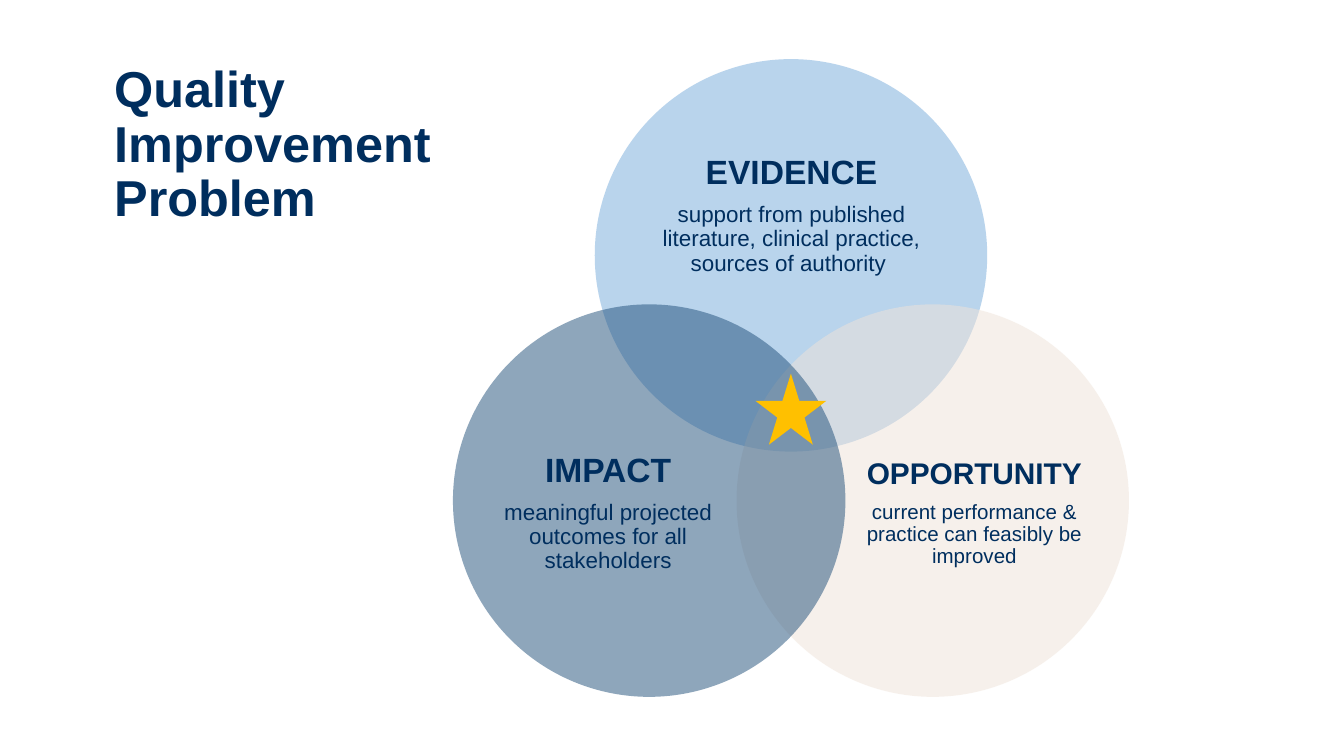
from dataclasses import dataclass

from lxml.etree import SubElement
from pptx import Presentation
from pptx.dml.color import RGBColor
from pptx.enum.shapes import MSO_SHAPE as Shape
from pptx.enum.text import MSO_ANCHOR as Anchor, MSO_AUTO_SIZE as Fit, PP_ALIGN as Align
from pptx.oxml.ns import qn
from pptx.util import Emu, Pt

SCALE = 4572  # EMU per px, 200 px to the inch


@dataclass(frozen=True)
class Theme:
    font: str = "Arial"
    ink: str = "002E5E"
    blue: str = "9CC2E5"
    sand: str = "EFE3D9"
    navy: str = "1E4E79"
    gold: str = "FFC000"
    title: int = 27
    large: tuple = (18, 12)
    small: tuple = (16, 11)
    lead: float = 0.9
    gap: float = 0.35  # space above a note, as a share of its head size


THEME = Theme()
SIZE = 584  # circle diameter

# head, note, (head size, note size), fill, opacity %, circle corner, text box
RINGS = [
    ("EVIDENCE", "support from published literature, clinical practice, sources of authority ",
     THEME.large, THEME.blue, 70, (885, 88), (964, 190, 428, 262)),
    ("OPPORTUNITY", "current performance & practice can feasibly be improved",
     THEME.small, THEME.sand, 50, (1096, 453), (1275, 603, 350, 322)),
    ("IMPACT", "meaningful projected outcomes for all stakeholders",
     THEME.large, THEME.navy, 50, (674, 453), (730, 603, 350, 322)),
]


def px(*nums):
    return [Emu(n * SCALE) for n in nums]


def write(para, text, *, size, bold=False, align=Align.LEFT, before=0):
    para.alignment = align
    para.line_spacing = THEME.lead
    para.space_before = Pt(before)
    run = para.add_run()
    run.text = text
    font = run.font
    font.name, font.size, font.bold = THEME.font, Pt(size), bold
    font.color.rgb = RGBColor.from_string(THEME.ink)


def frame(shape, *, side=0, top=0):
    """Set up a wrapped, vertically centred text frame."""
    body = shape.text_frame
    body.word_wrap, body.auto_size = True, Fit.NONE
    body.vertical_anchor = Anchor.MIDDLE
    body.margin_left, body.margin_right = px(side, side)
    body.margin_top, body.margin_bottom = px(top, top)
    return body


def add_title(slide, text, box):
    title = slide.shapes.title
    title.left, title.top, title.width, title.height = px(*box)
    write(frame(title, side=20, top=10).paragraphs[0], text, size=THEME.title, bold=True)


def add_form(slide, kind, box, fill, alpha=100):
    """Add a preset shape without outline; alpha is its opacity in percent."""
    form = slide.shapes.add_shape(kind, *px(*box))
    form.shadow.inherit = False
    form.line.fill.background()
    form.fill.solid()
    form.fill.fore_color.rgb = RGBColor.from_string(fill)
    if alpha < 100:
        tint = form.fill._xPr.find(".//" + qn("a:srgbClr"))
        SubElement(tint, qn("a:alpha"), val=str(alpha * 1000))


def add_label(slide, head, note, sizes, box):
    body = frame(slide.shapes.add_textbox(*px(*box)))
    big, small = sizes
    write(body.paragraphs[0], head, size=big, bold=True, align=Align.CENTER)
    write(body.add_paragraph(), note, size=small, align=Align.CENTER, before=big * THEME.gap)


def main():
    deck = Presentation()
    deck.slide_width, deck.slide_height = px(2000, 1125)
    slide = deck.slides.add_slide(deck.slide_layouts.get_by_name("Title Only"))
    add_title(slide, "Quality Improvement Problem", (150, 151, 676, 132))
    for head, note, sizes, fill, alpha, spot, box in RINGS:
        add_form(slide, Shape.OVAL, (*spot, SIZE, SIZE), fill, alpha)
        add_label(slide, head, note, sizes, box)
    add_form(slide, Shape.STAR_5_POINT, (1124, 556, 106, 106), THEME.gold)
    deck.save("out.pptx")


if __name__ == "__main__":
    main()
